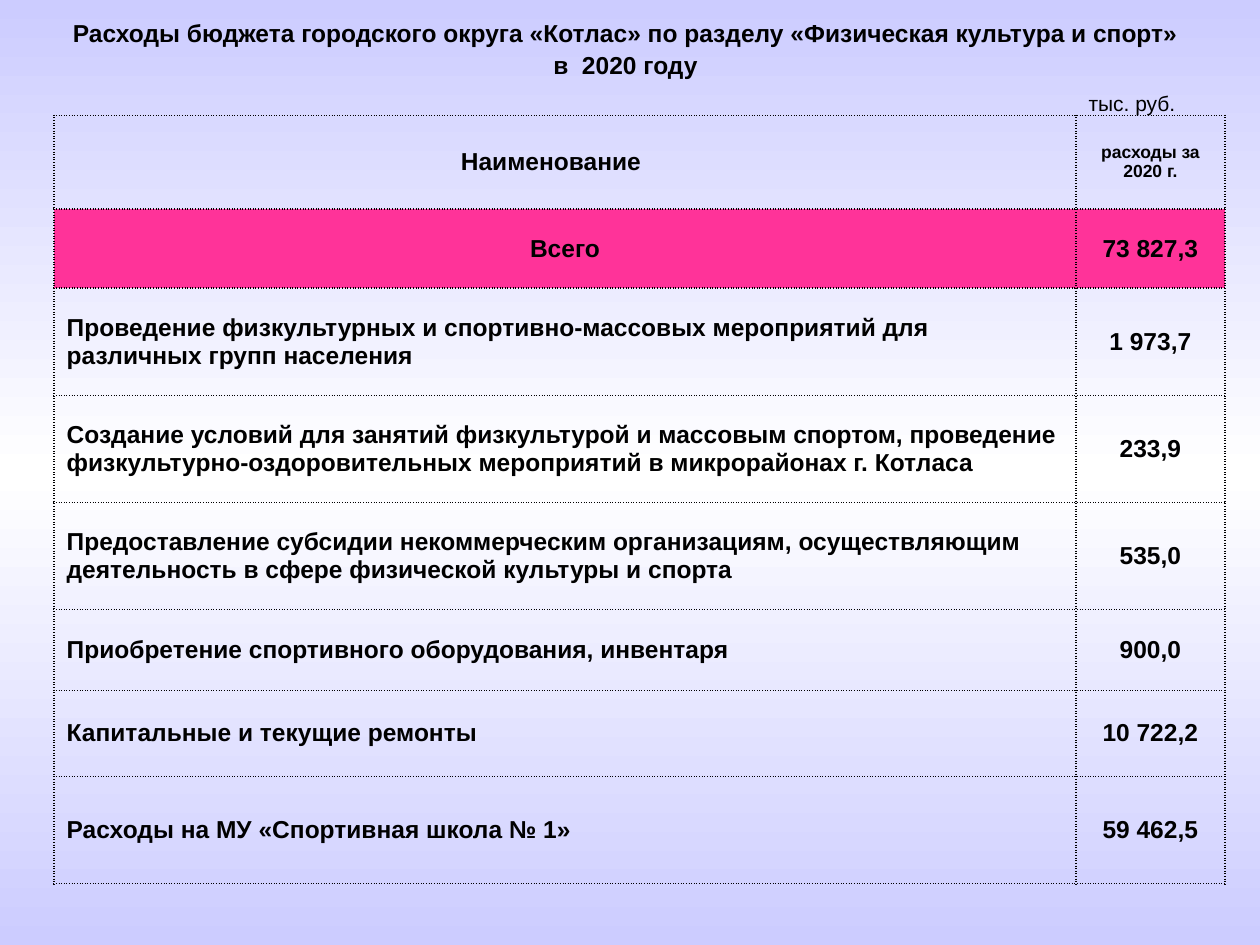
from copy import deepcopy

from lxml import etree
from pptx import Presentation
from pptx.dml.color import RGBColor
from pptx.enum.text import MSO_ANCHOR, PP_ALIGN
from pptx.oxml.ns import qn
from pptx.util import Cm, Pt

MIDDLE = MSO_ANCHOR.MIDDLE
LEFT, CENTER = PP_ALIGN.LEFT, PP_ALIGN.CENTER
BLACK, PINK, LILAC, WHITE = "000000", "FF3399", "CCCCFF", "FFFFFF"


def color(hex_code):
    return RGBColor.from_string(hex_code)


def write(frame, text, size, bold=True, align=CENTER):
    frame.word_wrap = True
    frame.vertical_anchor = MIDDLE
    paragraph = frame.paragraphs[0]
    paragraph.alignment = align
    run = paragraph.add_run()
    run.text = text
    run.font.name = "Arial"
    run.font.size = Pt(size)
    run.font.bold = bold
    run.font.color.rgb = color(BLACK)
    return paragraph


prs = Presentation()
prs.slide_width, prs.slide_height = Cm(25.4), Cm(19.05)
slide = prs.slides.add_slide(prs.slide_layouts[6])

# Background: lilac to white and back, top to bottom
background = slide.background.fill
background.gradient()
background.gradient_angle = 90
stop_list = next(slide.element.iter(qn("a:gsLst")))
stop_list.insert(1, deepcopy(stop_list[0]))
for stop, position, shade in zip(background.gradient_stops, (0, 0.5, 1), (LILAC, WHITE, LILAC)):
    stop.position = position
    stop.color.rgb = color(shade)

# Heading
heading = slide.shapes.add_textbox(Cm(1.09), Cm(0), Cm(23.04), Cm(1.93))
heading_line = write(
    heading.text_frame,
    "Расходы бюджета городского округа «Котлас» по разделу "
    "«Физическая культура и спорт» в  2020 году",
    14,
)
heading_line.line_spacing = 1.07

# Expenses: name, amount, row height in cm
expenses = [
    ("Наименование", "расходы за 2020 г.", 1.88),
    ("Всего", "73 827,3", 1.6),
    ("Проведение физкультурных и спортивно-массовых мероприятий для различных групп населения",
     "1 973,7", 2.16),
    ("Создание условий для занятий физкультурой и массовым спортом, проведение "
     "физкультурно-оздоровительных мероприятий в микрорайонах г. Котласа", "233,9", 2.16),
    ("Предоставление субсидии некоммерческим организациям, осуществляющим "
     "деятельность в сфере физической культуры и спорта", "535,0", 2.16),
    ("Приобретение спортивного оборудования, инвентаря", "900,0", 1.63),
    ("Капитальные и текущие ремонты", "10 722,2", 1.73),
    ("Расходы на МУ «Спортивная школа № 1»", "59 462,5", 2.16),
]
HEADER, TOTAL = 0, 1

table = slide.shapes.add_table(
    len(expenses), 2, Cm(1.09), Cm(2.33), Cm(23.6), Cm(15.48)
).table
table.first_row = table.horz_banding = False
table.columns[0].width, table.columns[1].width = Cm(20.6), Cm(3)

for row, (name, amount, height) in enumerate(expenses):
    table.rows[row].height = Cm(height)
    for column, text in enumerate((name, amount)):
        cell = table.cell(row, column)
        is_item_name = column == 0 and row > TOTAL
        size = 10 if row == HEADER and column == 1 else 14
        write(cell.text_frame, text, size, align=LEFT if is_item_name else CENTER)
        cell.vertical_anchor = MIDDLE

        # Dotted borders come before the fill in the cell properties
        properties = cell._tc.get_or_add_tcPr()
        for side in ("a:lnL", "a:lnR", "a:lnT", "a:lnB"):
            border = etree.SubElement(properties, qn(side), w=str(Pt(1)))
            line_fill = etree.SubElement(border, qn("a:solidFill"))
            etree.SubElement(line_fill, qn("a:srgbClr"), val=BLACK)
            etree.SubElement(border, qn("a:prstDash"), val="sysDot")

        if row == TOTAL:
            cell.fill.solid()
            cell.fill.fore_color.rgb = color(PINK)
        else:
            cell.fill.background()

# The name heading sits slightly left of centre
table.cell(HEADER, 0).margin_right = Cm(0.82)

# Unit of measure
unit = slide.shapes.add_textbox(Cm(21.62), Cm(1.57), Cm(2.4), Cm(1))
write(unit.text_frame, "тыс. руб.", 12, bold=False)

prs.save("out.pptx")
